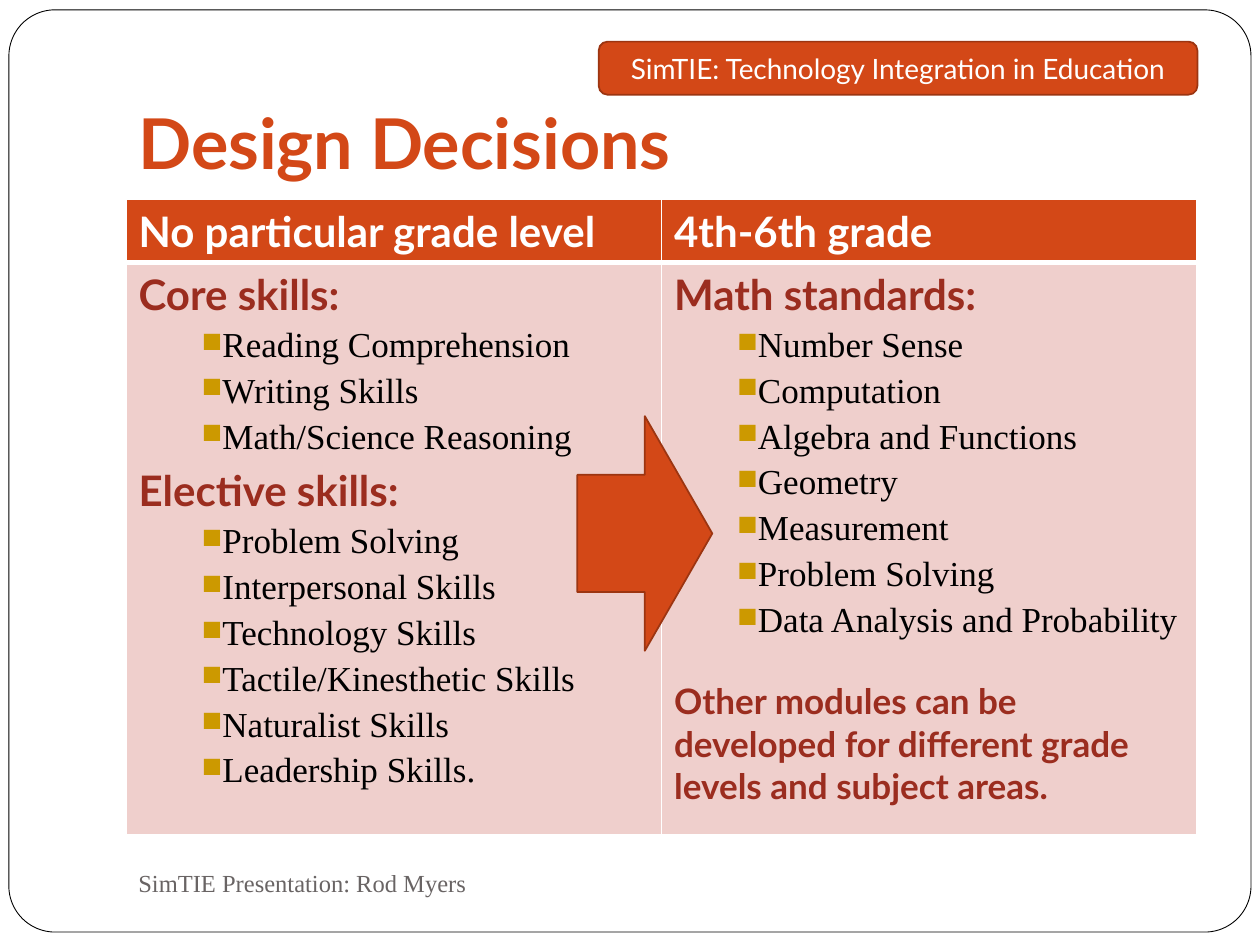
from lxml.etree import SubElement
from pptx import Presentation
from pptx.dml.color import RGBColor
from pptx.enum.shapes import MSO_SHAPE as Shape
from pptx.enum.text import MSO_ANCHOR as Anchor, PP_ALIGN as Align
from pptx.oxml import parse_xml
from pptx.oxml.ns import nsdecls, qn
from pptx.util import Cm, Pt

ORANGE, DARK_ORANGE, RED = "D34817", "9C3511", "9B2D1F"
PINK, GOLD, GREY = "EFCFCC", "CC9900", "696464"
WHITE, BLACK = "FFFFFF", "000000"
SANS, SERIF = "Lato", "Times New Roman"

HEADERS = ["No particular grade level", "4th-6th grade"]
SKILLS = [
    ("Core skills:", ["Reading Comprehension", "Writing Skills",
                      "Math/Science Reasoning"]),
    ("Elective skills:", ["Problem Solving", "Interpersonal Skills",
                          "Technology Skills", "Tactile/Kinesthetic Skills",
                          "Naturalist Skills", "Leadership Skills."]),
]
STANDARDS = [
    ("Math standards:", ["Number Sense", "Computation",
                         "Algebra and Functions", "Geometry", "Measurement",
                         "Problem Solving", "Data Analysis and Probability"]),
]
CLOSING = ("Other modules can be developed for different grade levels "
           "and subject areas.")


def color(value):
    """Turn a hex string into a colour."""
    return RGBColor.from_string(value)


def write(para, text, size, font, tint, bold=False):
    """Put formatted text into a paragraph."""
    para.text = text
    for span in para.runs:
        span.font.size = Pt(size)
        span.font.name = font
        span.font.bold = bold
        span.font.color.rgb = color(tint)


def add_shape(page, kind, place, fill, line, width):
    """Add a filled and outlined preset shape."""
    shape = page.shapes.add_shape(kind, *map(Cm, place))
    shape.shadow.inherit = False
    shape.fill.solid()
    shape.fill.fore_color.rgb = color(fill)
    shape.line.color.rgb = color(line)
    shape.line.width = Pt(width)
    return shape


def add_text(page, place, anchor, text, size, font, tint, bold=False):
    """Add a wrapping text box with one paragraph."""
    frame = page.shapes.add_textbox(*map(Cm, place)).text_frame
    frame.word_wrap = True
    frame.vertical_anchor = anchor
    write(frame.paragraphs[0], text, size, font, tint, bold)
    return frame


def space_before(para, percent):
    """Set the space above a paragraph as a share of its line."""
    spacing = SubElement(para._p.get_or_add_pPr(), qn("a:spcBef"))
    SubElement(spacing, qn("a:spcPct"), val=str(percent * 1000))


def add_bullet(para):
    """Give a paragraph an indented gold square."""
    props = para._p.get_or_add_pPr()
    props.set("marL", str(Cm(1.27)))
    props.set("indent", "0")
    tint = SubElement(props, qn("a:buClr"))
    SubElement(tint, qn("a:srgbClr"), val=GOLD)
    SubElement(props, qn("a:buSzPct"), val="80000")
    SubElement(props, qn("a:buChar"), char="■")


def style_cell(cell, fill, top, bottom):
    """Fill a cell and draw its white borders."""
    cell.fill.solid()
    cell.fill.fore_color.rgb = color(fill)
    props = cell._tc.get_or_add_tcPr()
    for index, (side, width) in enumerate(zip("LRTB", (1, 1, top, bottom))):
        props.insert(index, parse_xml(
            f'<a:ln{side} {nsdecls("a")} w="{Pt(width)}"><a:solidFill>'
            f'<a:srgbClr val="{WHITE}"/></a:solidFill></a:ln{side}>'))


def write_groups(frame, groups):
    """Write headings, each followed by its bulleted items."""
    para = frame.paragraphs[0]
    for heading, items in groups:
        if para.text:
            para = frame.add_paragraph()
        space_before(para, 20)
        write(para, heading, 24, SANS, RED, True)
        for item in items:
            para = frame.add_paragraph()
            para.level = 1
            space_before(para, 20)
            add_bullet(para)
            write(para, item, 20, SERIF, BLACK)


def add_comparison(page):
    """Add the table that sets skills beside standards."""
    place = map(Cm, (2.54, 4.02, 21.59, 12.32))
    table = page.shapes.add_table(2, 2, *place).table
    table.rows[0].height, table.rows[1].height = Cm(1.25), Cm(11.07)
    for column, (header, groups) in enumerate(zip(HEADERS, (SKILLS, STANDARDS))):
        head, body = table.cell(0, column), table.cell(1, column)
        style_cell(head, ORANGE, 1, 3)
        style_cell(body, PINK, 3, 1)
        write(head.text_frame.paragraphs[0], header, 24, SANS, WHITE, True)
        write_groups(body.text_frame, groups)
    closing = table.cell(1, 1).text_frame.add_paragraph()
    closing.space_before = Pt(23)
    write(closing, CLOSING, 20, SANS, RED, True)


def main():
    """Build the slide and save it."""
    deck = Presentation()
    deck.slide_width, deck.slide_height = Cm(25.4), Cm(19.05)
    page = deck.slides.add_slide(deck.slide_layouts[6])

    border = add_shape(page, Shape.ROUNDED_RECTANGLE,
                       (0.18, 0.2, 25.04, 18.59), WHITE, BLACK, 0.5)
    border.adjustments[0] = 0.05
    banner = add_shape(page, Shape.ROUNDED_RECTANGLE,
                       (12.07, 0.84, 12.07, 1.07), ORANGE, DARK_ORANGE, 1)
    banner.text_frame.vertical_anchor = Anchor.MIDDLE
    label = banner.text_frame.paragraphs[0]
    label.alignment = Align.CENTER
    write(label, "SimTIE: Technology Integration in Education", 16, SANS, WHITE)

    title = add_text(page, (2.54, 0.76, 21.59, 3.18), Anchor.BOTTOM,
                     "Design Decisions", 40, SANS, ORANGE, True)
    title.margin_bottom = Cm(0.25)
    add_comparison(page)
    add_text(page, (2.54, 17.15, 11, 1.27), Anchor.MIDDLE,
             "SimTIE Presentation: Rod Myers", 14, SERIF, GREY)
    add_shape(page, Shape.RIGHT_ARROW, (11.64, 8.39, 2.72, 4.73),
              ORANGE, DARK_ORANGE, 1)
    deck.save("out.pptx")


if __name__ == "__main__":
    main()
